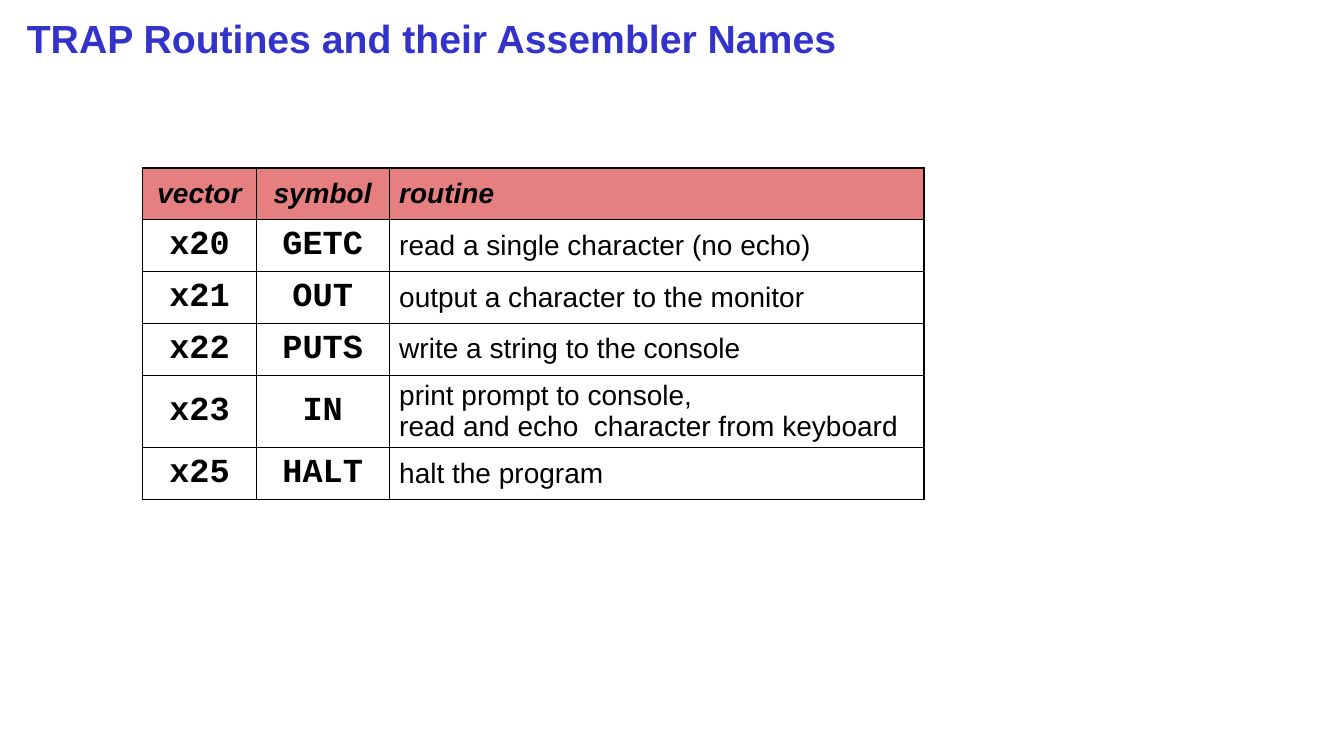
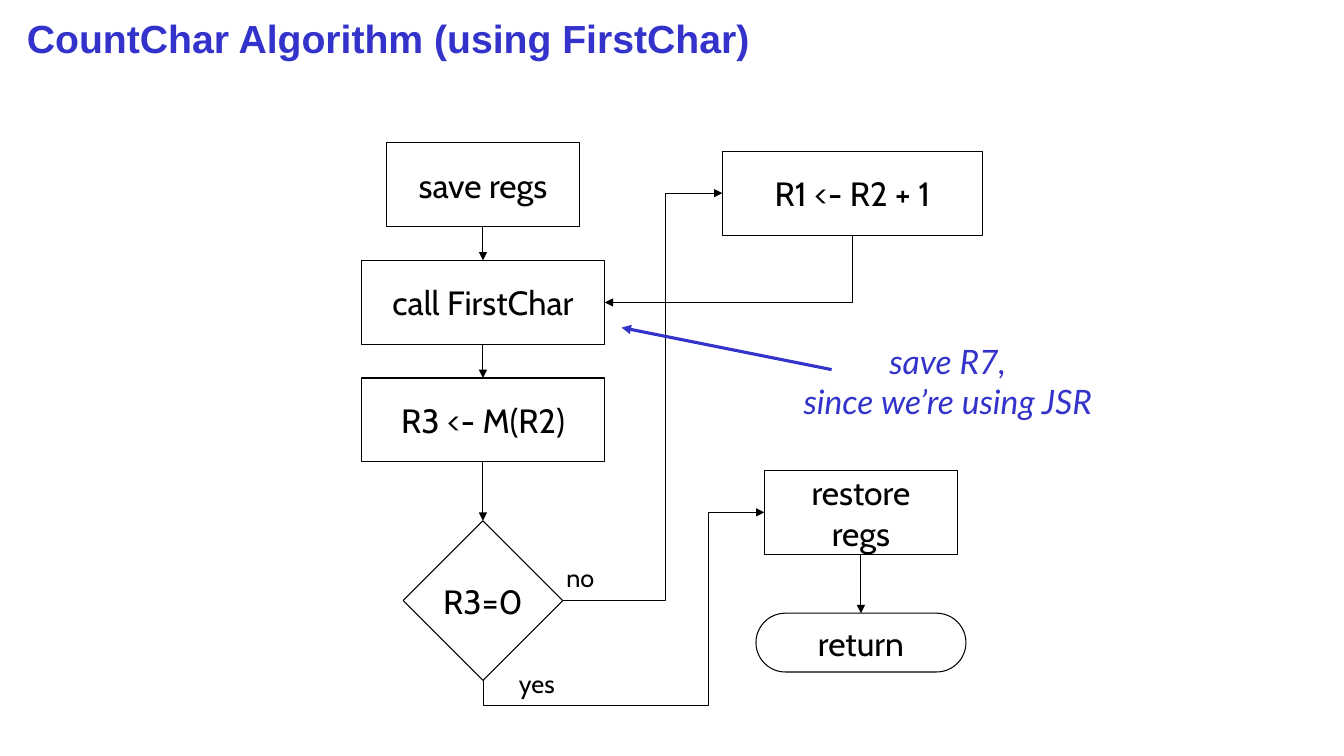
from lxml.etree import SubElement
from pptx import Presentation
from pptx.dml.color import RGBColor
from pptx.enum.shapes import MSO_CONNECTOR, MSO_SHAPE
from pptx.enum.text import MSO_ANCHOR, PP_ALIGN
from pptx.oxml.ns import qn
from pptx.util import Pt

HUES = {"ink": "000000", "blue": "3333CC", "red": "CE0000"}

ROWS = [
    ("vector", "symbol", "routine"),
    ("x20", "GETC", "read a single character (no echo)"),
    ("x21", "OUT", "output a character to the monitor"),
    ("x22", "PUTS", "write a string to the console"),
    ("x23", "IN", "print prompt to console,\vread and echo  character from keyboard"),
    ("x25", "HALT", "halt the program"),
]
WIDTHS = (81, 95, 382)
HEIGHTS = (37, 37, 37, 37, 51.5, 37)

STEPS = {
    "save": (MSO_SHAPE.RECTANGLE, 18, 0, 138, 60, "save regs"),
    "call": (MSO_SHAPE.RECTANGLE, 0, 84, 174, 60, "call FirstChar"),
    "load": (MSO_SHAPE.RECTANGLE, 0, 168, 174, 60, "R3 <- M(R2)"),
    "test": (MSO_SHAPE.DIAMOND, 30, 270, 114, 114, "R3=0"),
    "next": (MSO_SHAPE.RECTANGLE, 258, 6, 186, 60, "R1 <- R2 + 1"),
    "restore": (MSO_SHAPE.RECTANGLE, 288, 234, 138, 60, "restore\nregs"),
    "return": (MSO_SHAPE.ROUNDED_RECTANGLE, 282, 336, 150, 42, "return"),
}
LINKS = [("save", "call"), ("call", "load"), ("load", "test"), ("restore", "return")]
BENDS = [
    ("bentConnector3", (144, 327), (258, 36), 0, "V", (0.645,)),
    ("bentConnector4", (87, 384), (288, 264), 90, "HV", (-0.15, 0.8)),
    ("bentConnector2", (351, 66), (174, 114), 90, "", ()),
]
LABELS = [
    ((139, 296, 35, 29), "no", 18, "Cabin", "ink", False),
    ((105, 372, 41, 29), "yes", 18, "Cabin", "ink", False),
    ((301, 138, 236, 66), "save R7,\vsince we’re using JSR", 24, "Lato", "blue", True),
]


def tint(name):
    return RGBColor.from_string(HUES[name])


def style(frame, size, face, hue="ink", bold=False, slant=False, align=PP_ALIGN.CENTER):
    for para in frame.paragraphs:
        para.alignment = align
        for run in para.runs:
            font = run.font
            font.size, font.name = Pt(size), face
            font.bold, font.italic = bold, slant
            font.color.rgb = tint(hue)


def start(deck, title):
    slide = deck.slides.add_slide(deck.slide_layouts[5])
    head = slide.shapes.title
    head.left, head.top, head.width, head.height = Pt(12), Pt(6), Pt(912), Pt(42)
    frame = head.text_frame
    frame.text = title
    frame.vertical_anchor = MSO_ANCHOR.MIDDLE
    style(frame, 28, "Arial", "blue", bold=True, align=PP_ALIGN.LEFT)
    return slide


def border(cell):
    props = cell._tc.get_or_add_tcPr()
    for side in ("a:lnL", "a:lnR", "a:lnT", "a:lnB"):
        line = SubElement(props, qn(side), w=str(Pt(1)))
        fill = SubElement(line, qn("a:solidFill"))
        SubElement(fill, qn("a:srgbClr"), val=HUES["ink"])


def shade(cell, hue):
    cell.fill.solid()
    cell.fill.fore_color.rgb = tint(hue)
    color = cell._tc.tcPr.find(qn("a:solidFill")).find(qn("a:srgbClr"))
    SubElement(color, qn("a:alpha"), val="50000")


def grid(slide, left, top):
    table = slide.shapes.add_table(len(ROWS), len(WIDTHS), Pt(left), Pt(top),
                                   Pt(sum(WIDTHS)), Pt(sum(HEIGHTS))).table
    table.first_row = table.horz_banding = False
    for col, width in zip(table.columns, WIDTHS):
        col.width = Pt(width)
    for i, (row, height) in enumerate(zip(table.rows, HEIGHTS)):
        row.height = Pt(height)
        for j, cell in enumerate(row.cells):
            cell.text_frame.text = ROWS[i][j]
            cell.vertical_anchor = MSO_ANCHOR.MIDDLE
            border(cell)
            if i == 0:
                shade(cell, "red")
            else:
                cell.fill.background()
            code = i > 0 and j < 2
            style(cell.text_frame, 24 if code else 20, "Courier New" if code else "Arial",
                  bold=i == 0 or code, slant=i == 0,
                  align=PP_ALIGN.CENTER if j < 2 else PP_ALIGN.LEFT)


def step(slide, left, top, kind, x, y, width, height, text):
    box = slide.shapes.add_shape(kind, Pt(left + x), Pt(top + y), Pt(width), Pt(height))
    box.shadow.inherit = False
    box.fill.background()
    box.line.color.rgb = tint("ink")
    box.line.width = Pt(0.75)
    if kind == MSO_SHAPE.ROUNDED_RECTANGLE:
        box.adjustments[0] = 0.5
    frame = box.text_frame
    frame.text = text
    frame.word_wrap = False
    frame.vertical_anchor = MSO_ANCHOR.MIDDLE
    style(frame, 24, "Cabin")
    return box


def arrow(slide, kind, x, y, end, down, hue="ink", weight=0.75):
    link = slide.shapes.add_connector(kind, Pt(x), Pt(y), Pt(end), Pt(down))
    link.line.color.rgb = tint(hue)
    link.line.width = Pt(weight)
    SubElement(link.line._get_or_add_ln(), qn("a:tailEnd"), type="triangle")
    SubElement(link._element.spPr, qn("a:effectLst"))
    return link


def bend(slide, left, top, kind, tail, tip, turn, flips, ratios):
    wide, high = abs(tip[0] - tail[0]), abs(tip[1] - tail[1])
    if turn:
        wide, high = high, wide
    x = left + (tail[0] + tip[0] - wide) / 2
    y = top + (tail[1] + tip[1] - high) / 2
    link = arrow(slide, MSO_CONNECTOR.ELBOW, x, y, x + wide, y + high)
    props = link._element.spPr
    frame = props.find(qn("a:xfrm"))
    frame.set("rot", str(turn * 60000))
    for flip in flips:
        frame.set("flip" + flip, "1")
    shape = props.find(qn("a:prstGeom"))
    shape.set("prst", kind)
    guides = shape.find(qn("a:avLst"))
    for n, ratio in enumerate(ratios, 1):
        SubElement(guides, qn("a:gd"), name=f"adj{n}", fmla=f"val {round(ratio * 100000)}")


def label(slide, left, top, box, text, size, face, hue, slant):
    x, y, width, height = box
    note = slide.shapes.add_textbox(Pt(left + x), Pt(top + y), Pt(width), Pt(height))
    frame = note.text_frame
    frame.text = text
    frame.word_wrap = False
    style(frame, size, face, hue, slant=slant)


def flow(slide, left, top):
    boxes = {name: step(slide, left, top, *spec) for name, spec in STEPS.items()}
    for tail, tip in LINKS:
        link = arrow(slide, MSO_CONNECTOR.STRAIGHT, left, top, left, top)
        link.begin_connect(boxes[tail], 2)
        link.end_connect(boxes[tip], 0)
    for turn in BENDS:
        bend(slide, left, top, *turn)
    for note in LABELS:
        label(slide, left, top, *note)
    arrow(slide, MSO_CONNECTOR.STRAIGHT, left + 336, top + 162,
          left + 186, top + 132, "blue", 2.25)


def main():
    deck = Presentation()
    deck.slide_width, deck.slide_height = Pt(960), Pt(540)
    grid(start(deck, "TRAP Routines and their Assembler Names"), 102, 120)
    flow(start(deck, "CountChar Algorithm (using FirstChar)"), 258, 102)
    deck.save("out.pptx")


if __name__ == "__main__":
    main()
